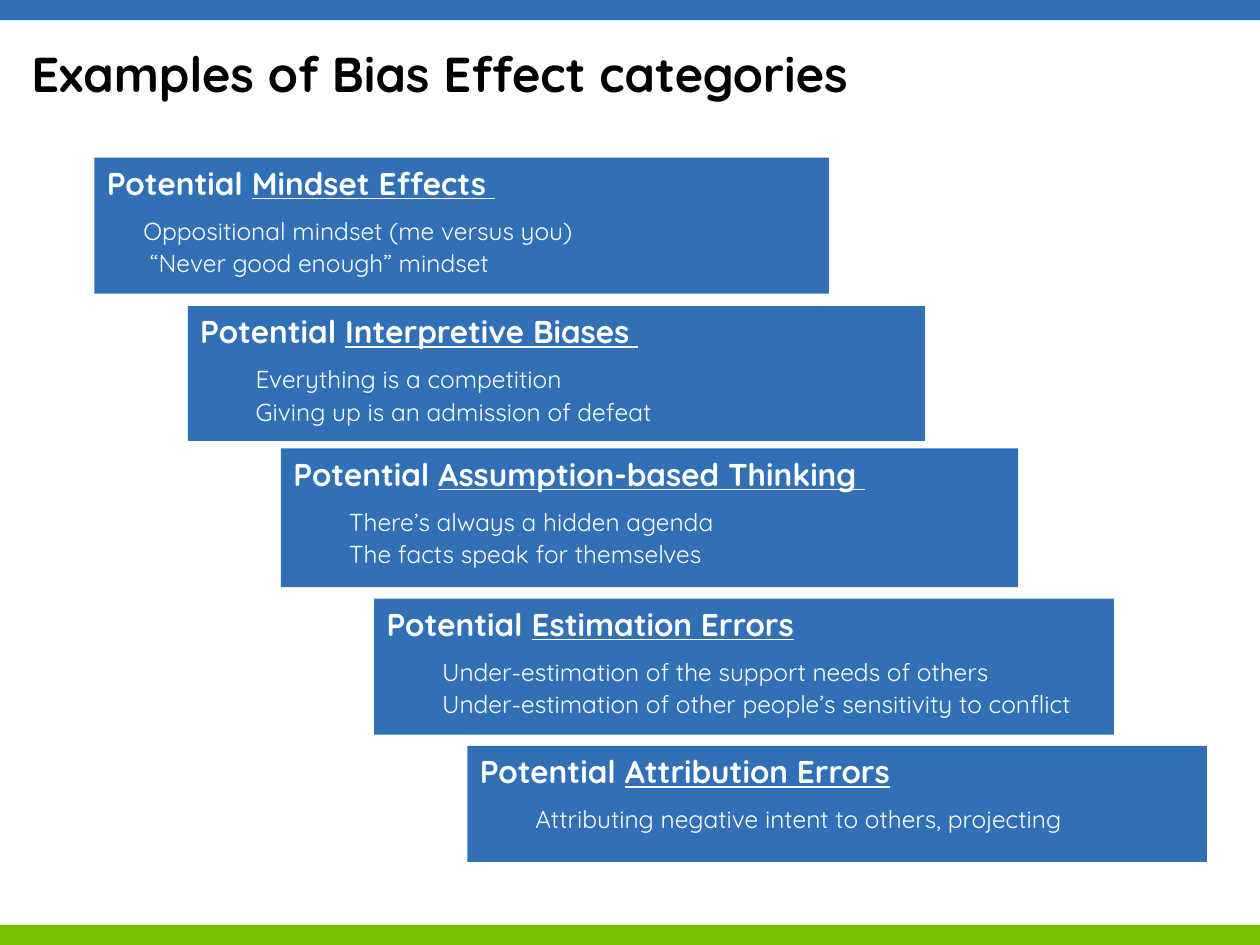
from pptx import Presentation
from pptx.dml.color import RGBColor
from pptx.enum.shapes import MSO_SHAPE
from pptx.enum.text import MSO_ANCHOR, PP_ALIGN
from pptx.util import Inches, Pt

RECTANGLE = MSO_SHAPE.RECTANGLE
TOP = MSO_ANCHOR.TOP
LEFT = PP_ALIGN.LEFT

FONT = "Quicksand"
COLORS = {"blue": "3170B7", "green": "79C000", "white": "FFFFFF", "black": "000000"}

TITLE = "Examples of Bias Effect categories"
# Category, examples, top, width, height, indent of the examples
CATEGORIES = [
    ("Mindset Effects ",
     ["Oppositional mindset (me versus you)", " “Never good enough” mindset"],
     1.25, 5.83, 1.08, 0.29),
    ("Interpretive Biases ",
     ["Everything is a competition", "Giving up is an admission of defeat"],
     2.43, 5.85, 1.07, 0.44),
    ("Assumption-based Thinking ",
     ["There’s always a hidden agenda", "The facts speak for themselves"],
     3.56, 5.85, 1.10, 0.44),
    ("Estimation Errors",
     ["Under-estimation of the support needs of others",
      "Under-estimation of other people’s sensitivity to conflict"],
     4.75, 5.87, 1.08, 0.44),
    ("Attribution Errors",
     ["Attributing negative intent to others, projecting"],
     5.92, 5.87, 0.92, 0.44),
]
FIRST_LEFT, STEP = 0.75, 0.74
SLIDE_WIDTH, SLIDE_HEIGHT, BAND = 10, 7.5, 0.16


def add_block(slide, left, top, width, height, color):
    shape = slide.shapes.add_shape(
        RECTANGLE, Inches(left), Inches(top), Inches(width), Inches(height))
    shape.shadow.inherit = False
    shape.fill.solid()
    shape.fill.fore_color.rgb = RGBColor.from_string(COLORS[color])
    shape.line.fill.background()
    return shape


def add_run(paragraph, text, size, color, bold=False, underline=False):
    run = paragraph.add_run()
    run.text = text
    run.font.name = FONT
    run.font.size = Pt(size)
    run.font.bold = bold
    run.font.underline = underline
    run.font.color.rgb = RGBColor.from_string(COLORS[color])


def add_category(slide, left, name, examples, top, width, height, indent):
    frame = add_block(slide, left, top, width, height, "blue").text_frame
    frame.word_wrap = True
    frame.vertical_anchor = TOP

    heading = frame.paragraphs[0]
    heading.alignment = LEFT
    heading.space_after = Pt(6)
    add_run(heading, "Potential ", 18, "white", bold=True)
    add_run(heading, name, 18, "white", bold=True, underline=True)

    for example in examples:
        paragraph = frame.add_paragraph()
        paragraph.level = 1
        paragraph.alignment = LEFT
        paragraph.space_before = Pt(2)
        properties = paragraph._p.get_or_add_pPr()
        properties.set("marL", str(Inches(indent)))
        properties.set("indent", "0")
        add_run(paragraph, example, 14, "white")


presentation = Presentation()
presentation.slide_width = Inches(SLIDE_WIDTH)
presentation.slide_height = Inches(SLIDE_HEIGHT)
slide = presentation.slides.add_slide(presentation.slide_layouts[6])

# Top and bottom bands
add_block(slide, 0, 0, SLIDE_WIDTH, BAND, "blue")
add_block(slide, 0, SLIDE_HEIGHT - BAND, SLIDE_WIDTH, BAND, "green")

# Title
title = slide.shapes.add_textbox(Inches(0.25), Inches(0.42), Inches(8.17), Inches(0.67))
title_frame = title.text_frame
title_frame.word_wrap = True
title_frame.vertical_anchor = TOP
title_frame.margin_left = title_frame.margin_right = 0
title_frame.margin_top = title_frame.margin_bottom = 0
title_paragraph = title_frame.paragraphs[0]
title_paragraph.line_spacing = 0.85
add_run(title_paragraph, TITLE, 28, "black", bold=True)

# Staircase of categories
for index, category in enumerate(CATEGORIES):
    add_category(slide, FIRST_LEFT + index * STEP, *category)

presentation.save("out.pptx")
